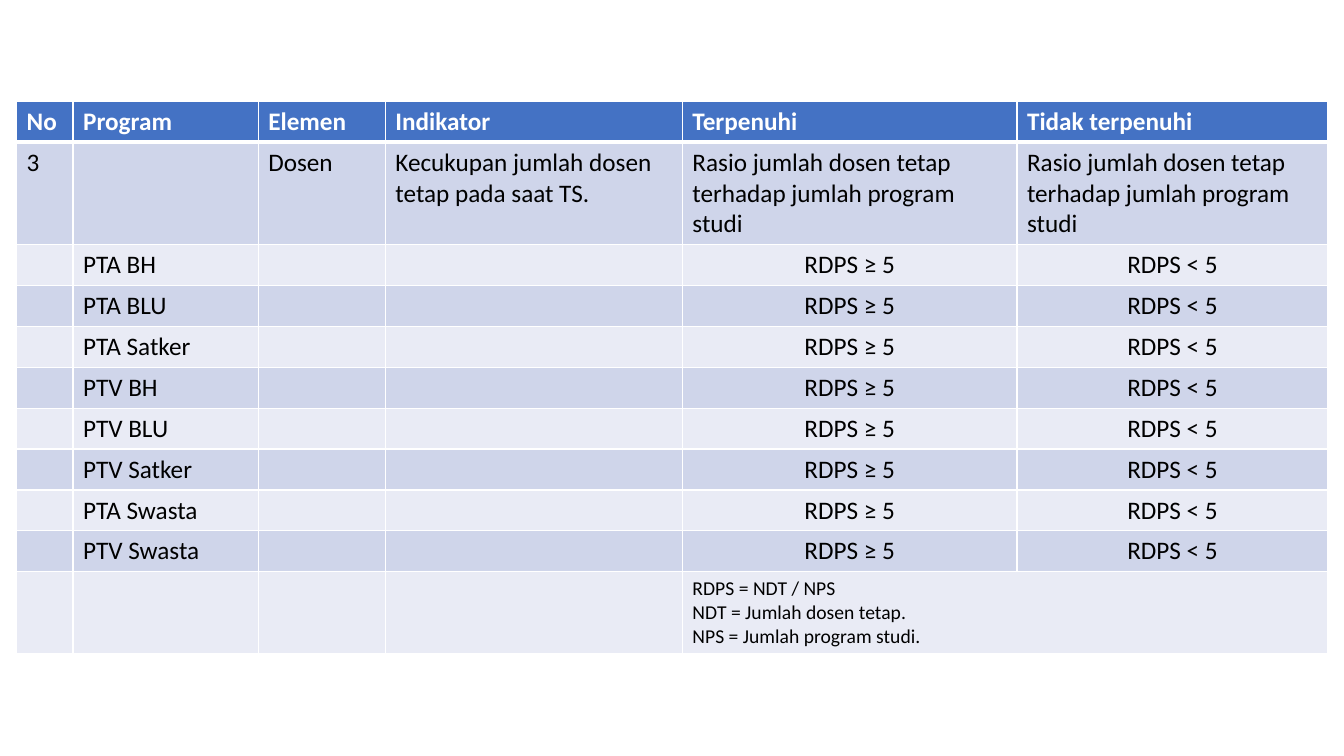
import pptx
import pptx.util
import pptx.dml.color
import pptx.enum.text
import pptx.oxml
import pptx.oxml.ns

Pt = pptx.util.Pt
ALIGN = pptx.enum.text.PP_ALIGN
COLORS = {
    "header": "4472C4",
    "dark_band": "CFD5EA",
    "light_band": "E9EBF5",
    "white": "FFFFFF",
    "black": "000000",
}


def rgb(name):
    return pptx.dml.color.RGBColor.from_string(COLORS[name])


def add_border(cell, side, width):
    cell._tc.get_or_add_tcPr().append(pptx.oxml.parse_xml(
        f'<a:{side} {pptx.oxml.ns.nsdecls("a")} w="{Pt(width)}"><a:solidFill>'
        f'<a:srgbClr val="{COLORS["white"]}"/></a:solidFill></a:{side}>'))


presentation = pptx.Presentation()
presentation.slide_width = Pt(960)
presentation.slide_height = Pt(540)
slide = presentation.slides.add_slide(presentation.slide_layouts[6])

ratio = "Rasio jumlah dosen tetap terhadap jumlah program studi"
formula = "RDPS = NDT / NPS\nNDT = Jumlah dosen tetap.\nNPS = Jumlah program studi."
programs = ["PTA BH", "PTA BLU", "PTA Satker", "PTV BH", "PTV BLU", "PTV Satker",
            "PTA Swasta", "PTV Swasta"]
rows = [
    ["No", "Program", "Elemen", "Indikator", "Terpenuhi", "Tidak terpenuhi"],
    ["3", "", "Dosen", "Kecukupan jumlah dosen tetap pada saat TS.", ratio, ratio],
]
rows += [["", program, "", "", "RDPS ≥ 5", "RDPS < 5"] for program in programs]
rows.append(["", "", "", "", formula, ""])
last_row = len(rows) - 1

column_widths = [40.3, 132.3, 90.8, 212.2, 239, 222.2]
row_heights = [29.2, 73.2] + [29.2] * len(programs) + [58.6]

table = slide.shapes.add_table(
    len(rows), len(column_widths), Pt(11.9), Pt(72.4),
    Pt(sum(column_widths)), Pt(sum(row_heights))).table
for column, width in zip(table.columns, column_widths):
    column.width = Pt(width)
for row, height in zip(table.rows, row_heights):
    row.height = Pt(height)
table.cell(last_row, 4).merge(table.cell(last_row, 5))

for row_index, texts in enumerate(rows):
    is_header = row_index == 0
    band = "header" if is_header else "dark_band" if row_index % 2 else "light_band"
    for column_index, text in enumerate(texts):
        cell = table.cell(row_index, column_index)
        add_border(cell, "lnL", 1)
        add_border(cell, "lnR", 1)
        add_border(cell, "lnT", 3 if row_index == 1 else 1)
        add_border(cell, "lnB", 3 if is_header else 1)
        cell.fill.solid()
        cell.fill.fore_color.rgb = rgb(band)
        if not text:
            continue
        cell.text_frame.text = text
        for paragraph in cell.text_frame.paragraphs:
            if row_index == last_row:
                paragraph.alignment = ALIGN.JUSTIFY
            elif row_index > 1 and column_index >= 4:
                paragraph.alignment = ALIGN.CENTER
            for run in paragraph.runs:
                run.font.name = "Calibri"
                run.font.size = Pt(14 if row_index == last_row else 18)
                run.font.bold = is_header
                run.font.color.rgb = rgb("white" if is_header else "black")

presentation.save("out.pptx")
